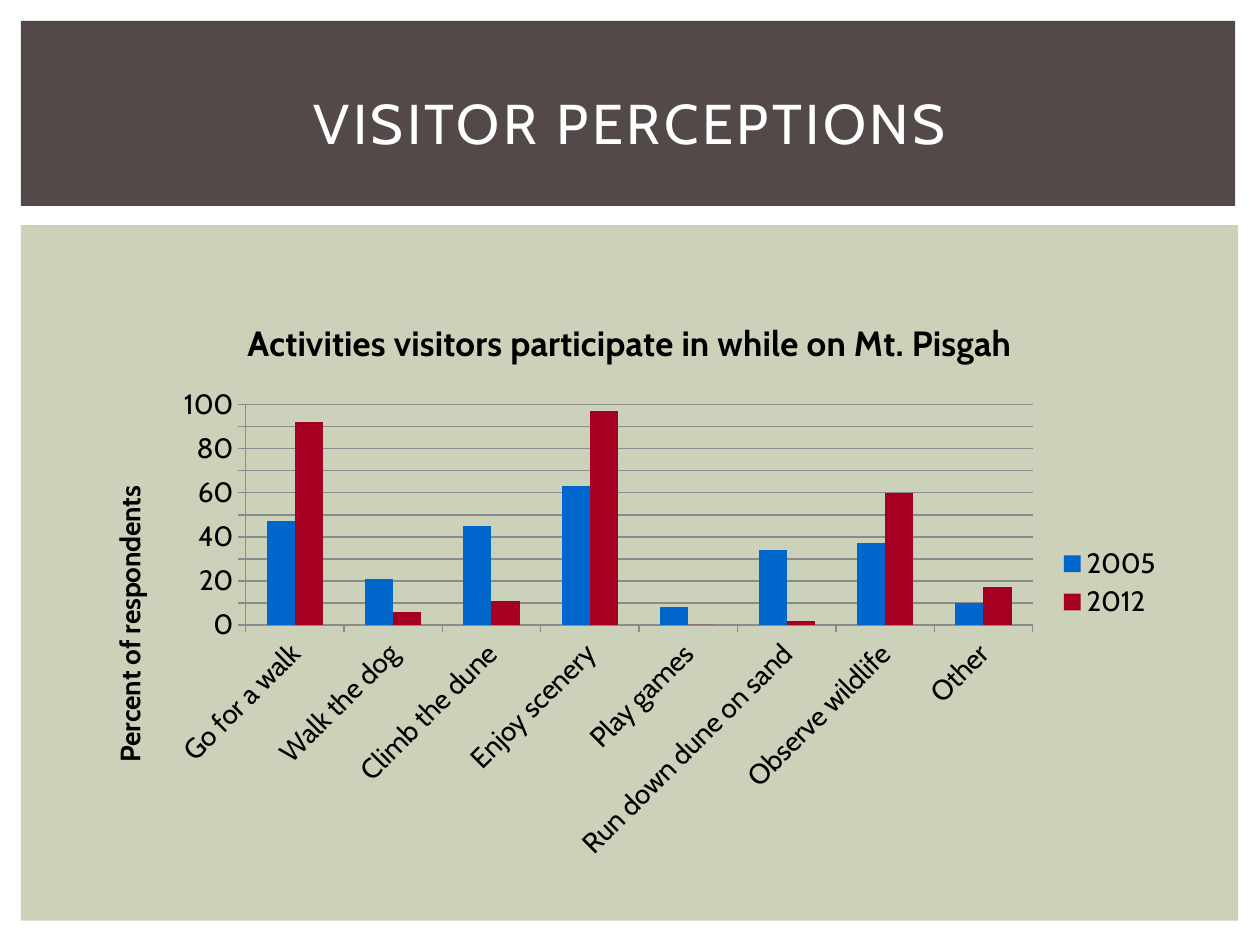
from lxml.etree import SubElement
from pptx import Presentation
from pptx.chart.data import CategoryChartData
from pptx.dml.color import RGBColor
from pptx.enum.chart import XL_CHART_TYPE, XL_LEGEND_POSITION, XL_TICK_MARK
from pptx.enum.shapes import MSO_SHAPE
from pptx.enum.text import MSO_ANCHOR, PP_ALIGN
from pptx.oxml.ns import qn
from pptx.util import Cm, Pt

FACE = "Cabin"
BLACK = RGBColor(0x00, 0x00, 0x00)
WHITE = RGBColor(0xFF, 0xFF, 0xFF)
BROWN = RGBColor(0x53, 0x49, 0x49)
SAGE = RGBColor(0xCC, 0xD1, 0xB9)
BLUE = RGBColor(0x00, 0x66, 0xCC)
RED = RGBColor(0xA5, 0x00, 0x21)
GREY = RGBColor(0x8B, 0x8B, 0x8B)

HEAD = "VISITOR PERCEPTIONS"
TOPIC = "Activities visitors participate in while on Mt. Pisgah"
UNIT = "Percent of respondents"
PANELS = [  # left, top, width, height in cm, fill
    (0.42, 4.54, 24.54, 14.02, SAGE),
    (0.42, 0.42, 24.48, 3.73, BROWN),
]
WIDE, HIGH = 22.02, 11.63  # chart size in cm
YEARS = [("2005", BLUE), ("2012", RED)]
ROWS = [
    ("Go for a walk", 47, 92),
    ("Walk the dog", 21, 6),
    ("Climb the dune", 45, 11),
    ("Enjoy scenery", 63, 97),
    ("Play games", 8, 0),
    ("Run down dune on sand", 34, 2),
    ("Observe wildlife", 37, 60),
    ("Other", 10, 17),
]


def style(font, size, color=BLACK, bold=False):
    font.name, font.size, font.bold = FACE, Pt(size), bold
    font.color.rgb = color


def place(node, index, **spots):
    """Pin a chart part at lengths in cm from the chart's corner."""
    for old in node.findall(qn("c:layout")):
        node.remove(old)
    layout = SubElement(node, qn("c:layout"))
    node.insert(index, layout)
    manual = SubElement(layout, qn("c:manualLayout"))
    if "w" in spots:
        SubElement(manual, qn("c:layoutTarget")).set("val", "inner")
    for key in ("x", "y"):
        SubElement(manual, qn(f"c:{key}Mode")).set("val", "edge")
    for key, size in spots.items():
        whole = WIDE if key in "xw" else HIGH
        SubElement(manual, qn(f"c:{key}")).set("val", str(size / whole))


def caption(owner, text, size):
    frame = owner.text_frame
    frame.text = text
    style(frame.paragraphs[0].font, size, bold=True)


def add_panels(slide):
    for left, top, width, height, color in PANELS:
        panel = slide.shapes.add_shape(
            MSO_SHAPE.RECTANGLE, Cm(left), Cm(top), Cm(width), Cm(height))
        panel.shadow.inherit = False
        panel.fill.solid()
        panel.fill.fore_color.rgb = color
        panel.line.fill.background()


def set_title(slide):
    title = slide.shapes.title
    title.left, title.top = Cm(1.05), Cm(1)
    title.width, title.height = Cm(23.3), Cm(2.92)
    title.text = HEAD
    title.text_frame.vertical_anchor = MSO_ANCHOR.MIDDLE
    line = title.text_frame.paragraphs[0]
    line.alignment = PP_ALIGN.CENTER
    style(line.font, 32, WHITE)
    line.runs[0].font.size = Pt(32)
    for props in title.element.iter(qn("a:rPr")):
        props.set("spc", "200")
    title.element.getparent().append(title.element)  # in front of the panels


def add_chart(slide):
    data = CategoryChartData()
    names, *values = zip(*ROWS)
    data.categories = names
    for (year, _), column in zip(YEARS, values):
        data.add_series(year, column)
    chart = slide.shapes.add_chart(
        XL_CHART_TYPE.COLUMN_CLUSTERED,
        Cm(1.69), Cm(5.92), Cm(WIDE), Cm(HIGH), data).chart
    style(chart.font, 10)

    plot = chart.plots[0]
    plot.gap_width, plot.overlap = 150, 0
    plot.vary_by_categories = False
    for series, (_, color) in zip(plot.series, YEARS):
        series.format.fill.solid()
        series.format.fill.fore_color.rgb = color

    across, up = chart.category_axis, chart.value_axis
    for axis in (across, up):
        axis.major_tick_mark = XL_TICK_MARK.OUTSIDE
        axis.format.line.color.rgb = GREY
        style(axis.tick_labels.font, 16)
    up.minimum_scale, up.maximum_scale, up.major_unit = 0, 100, 10
    up.has_major_gridlines = True
    up.major_gridlines.format.line.color.rgb = GREY

    chart.has_title = up.has_title = chart.has_legend = True
    caption(chart.chart_title, TOPIC, 20)
    caption(up.axis_title, UNIT, 16)
    chart.legend.position = XL_LEGEND_POSITION.RIGHT
    chart.legend.include_in_layout = False
    style(chart.legend.font, 16)

    root = chart.element
    root.xpath(".//c:catAx/c:txPr/a:bodyPr")[0].set("rot", "-2700000")
    turn = root.xpath(".//c:valAx/c:title//a:bodyPr")[0]
    turn.set("rot", "-5400000")
    turn.set("vert", "horz")
    place(root.xpath(".//c:plotArea")[0], 0, x=3.26, y=2.24, w=15.87, h=4.44)
    place(root.xpath(".//c:valAx/c:title")[0], 1, x=0.44, y=3.78)
    place(root.xpath(".//c:legend")[0], 1, x=19.57, y=5)


def main():
    deck = Presentation()
    deck.slide_width, deck.slide_height = Cm(25.4), Cm(19.05)
    slide = deck.slides.add_slide(deck.slide_layouts[5])
    add_panels(slide)
    set_title(slide)
    add_chart(slide)
    deck.save("out.pptx")


if __name__ == "__main__":
    main()
